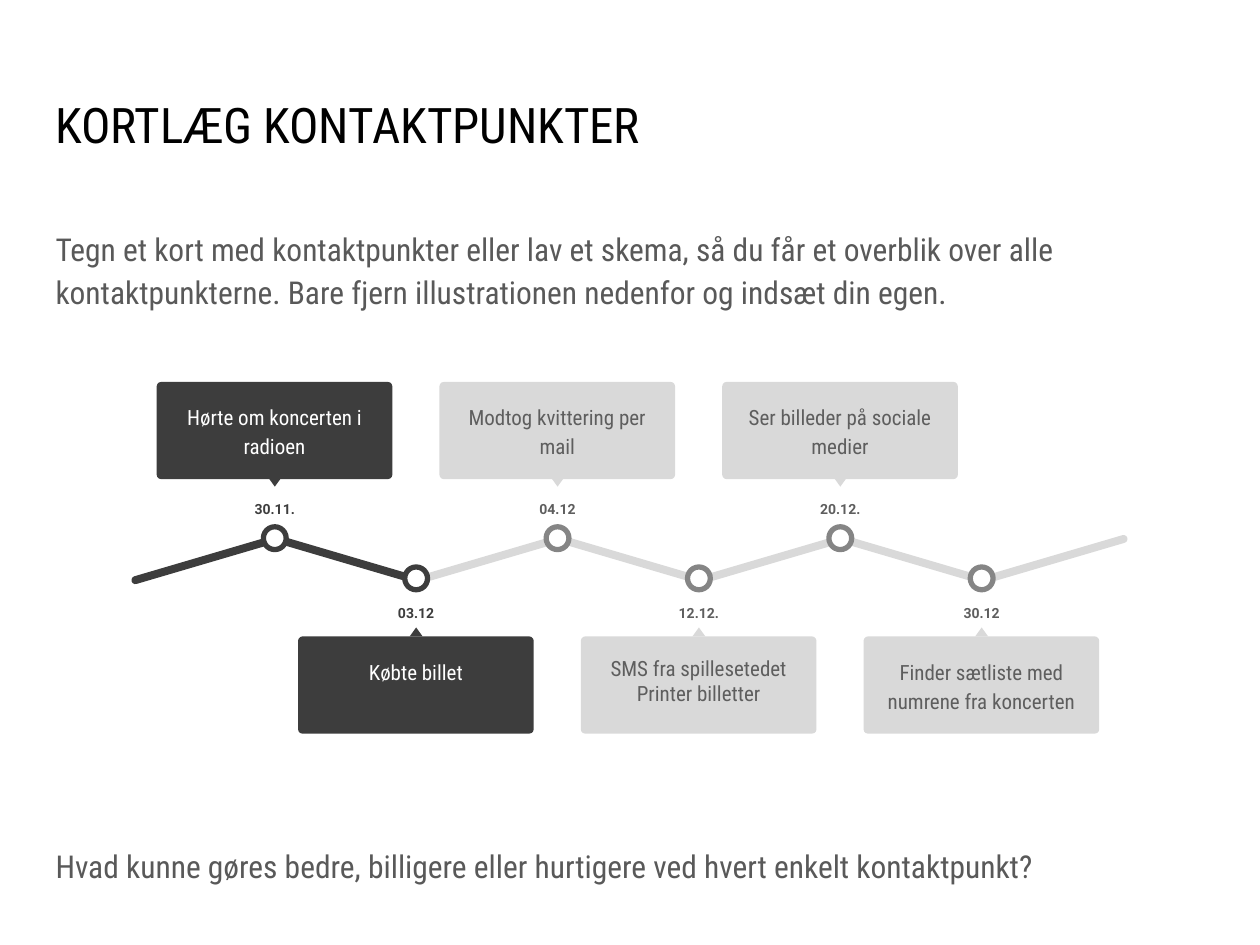
"""Build the slide that maps a concert-goer's contact points on a zigzag timeline."""
from pptx import Presentation
from pptx.dml.color import RGBColor
from pptx.enum.shapes import MSO_SHAPE
from pptx.enum.text import MSO_ANCHOR, MSO_AUTO_SIZE, PP_ALIGN
from pptx.util import Cm, Pt

DARK, PALE, RING, GREY = "3D3D3D", "D9D9D9", "858585", "5E5E5E"
CONDENSED = "Roboto Condensed"
STEP = 2.85
EVENTS = [
    ("30.11.", "Hørte om koncerten i radioen", 1.15),
    ("03.12", "Købte billet", 1.15),
    ("04.12", "Modtog kvittering per mail", 1.15),
    ("12.12.", "SMS fra spillesetedet Printer billetter", 1),
    ("20.12.", "Ser billeder på sociale medier", 1.15),
    ("30.12", "Finder sætliste med numrene fra koncerten", 1.15),
]


def add_solid(kind, left, top, width, height, color):
    shape = slide.shapes.add_shape(kind, Cm(left), Cm(top), Cm(width), Cm(height))
    shape.shadow.inherit = False
    shape.fill.solid()
    shape.fill.fore_color.rgb = RGBColor.from_string(color)
    shape.line.fill.background()
    return shape


def style_text(frame, font, size, color, align, spacing=1, bold=False, inset=0.25):
    frame.word_wrap = True
    frame.auto_size = MSO_AUTO_SIZE.NONE
    frame.vertical_anchor = MSO_ANCHOR.TOP
    frame.margin_left = frame.margin_right = Cm(inset)
    frame.margin_top = frame.margin_bottom = Cm(inset)
    for paragraph in frame.paragraphs:
        paragraph.alignment = align
        paragraph.line_spacing = spacing
        for run in paragraph.runs:
            run.font.name = font
            run.font.size = Pt(size)
            run.font.bold = bold
            run.font.color.rgb = RGBColor.from_string(color)


prs = Presentation()
prs.slide_width, prs.slide_height = Cm(25.4), Cm(19.05)
slide = prs.slides.add_slide(prs.slide_layouts[5])

title = slide.shapes.title
title.left, title.top, title.width, title.height = Cm(0.87), Cm(1.65), Cm(23.67), Cm(2.11)
title.text_frame.text = "KORTLÆG KONTAKTPUNKTER"
style_text(title.text_frame, CONDENSED, 28, "000000", PP_ALIGN.LEFT)

body = slide.shapes.add_textbox(Cm(0.87), Cm(4.27), Cm(23.67), Cm(12.65)).text_frame
body.text = (
    "Tegn et kort med kontaktpunkter eller lav et skema, så du får et overblik over alle "
    "kontaktpunkterne. Bare fjern illustrationen nedenfor og indsæt din egen."
)
question = body.add_paragraph()
question.text = "Hvad kunne gøres bedre, billigere eller hurtigere ved hvert enkelt kontaktpunkt?"
question.space_before = Pt(303)
style_text(body, CONDENSED, 18, "595959", PP_ALIGN.LEFT, 1.15)

for index in reversed(range(len(EVENTS) + 1)):
    segment = add_solid(MSO_SHAPE.ROUNDED_RECTANGLE, 2.59 + STEP * index, 11.2, 3.1, 0.16,
                        DARK if index < 2 else PALE)
    segment.adjustments[0] = 0.5
    segment.rotation = 16.4 if index % 2 else 343.6

for index, (date, event, spacing) in enumerate(EVENTS):
    center = 5.54 + STEP * index
    if index % 2:
        box_top, pointer_top, date_top, ring_top = 12.83, 12.65, 11.89, 11.43
    else:
        box_top, pointer_top, date_top, ring_top = 7.7, 9.63, 9.8, 10.62
    if index < 2:
        box_color, event_color, date_color, ring_color = DARK, "FFFFFF", DARK, DARK
    else:
        box_color, event_color, date_color, ring_color = PALE, GREY, GREY, RING

    box = add_solid(MSO_SHAPE.ROUNDED_RECTANGLE, center - 2.38, box_top, 4.75, 1.96, box_color)
    box.adjustments[0] = 0.045
    box.text_frame.text = event
    style_text(box.text_frame, CONDENSED, 12, event_color, PP_ALIGN.CENTER, spacing, inset=0.36)

    pointer = add_solid(MSO_SHAPE.ISOSCELES_TRIANGLE, center - 0.13, pointer_top, 0.26, 0.18, box_color)
    pointer.rotation = 0 if index % 2 else 180

    ring = add_solid(MSO_SHAPE.OVAL, center - 0.23, ring_top, 0.46, 0.46, "FFFFFF")
    ring.line.color.rgb = RGBColor.from_string(ring_color)
    ring.line.width = Pt(3)

    date_label = slide.shapes.add_textbox(Cm(center - 0.97), Cm(date_top), Cm(1.94), Cm(0.76)).text_frame
    date_label.text = date
    style_text(date_label, "Roboto", 8, date_color, PP_ALIGN.CENTER, 1.15, bold=True)

prs.save("out.pptx")
